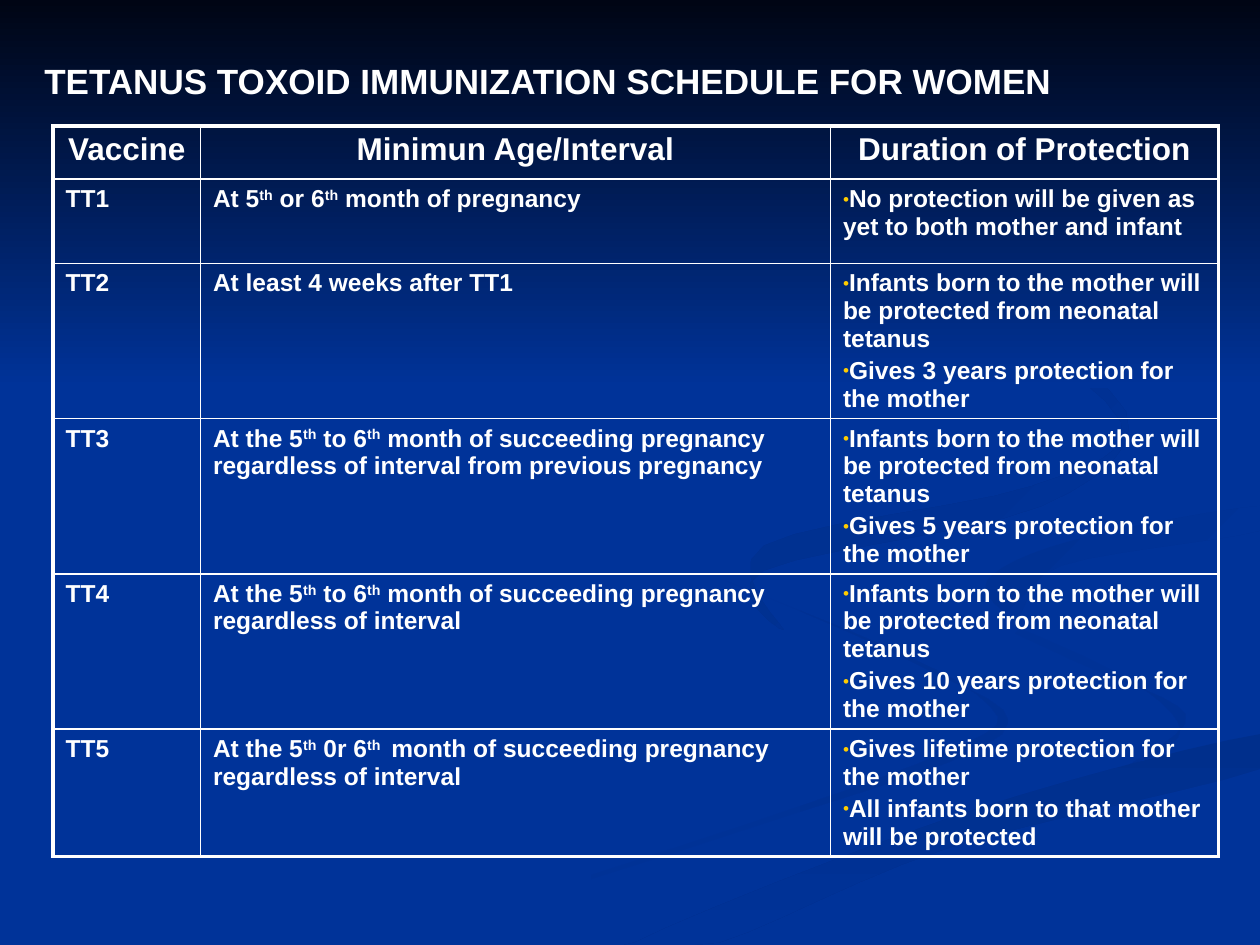
"""Build the tetanus toxoid immunization schedule slide."""
from lxml import etree
from pptx import Presentation
from pptx.dml.color import RGBColor
from pptx.enum.shapes import MSO_SHAPE
from pptx.enum.text import MSO_ANCHOR, PP_ALIGN
from pptx.oxml.ns import qn
from pptx.util import Cm, Pt

LEFT, CENTER = PP_ALIGN.LEFT, PP_ALIGN.CENTER
TOP = MSO_ANCHOR.TOP
RECTANGLE = MSO_SHAPE.RECTANGLE
FONT = "Arial"
COLORS = {
    "blue": "003399", "night": "000514", "white": "FFFFFF", "gold": "FFCC00",
    "shade": "003193", "deep": "002F8C",
}

TITLE = "TETANUS TOXOID IMMUNIZATION SCHEDULE FOR WOMEN"
HEADERS = ["Vaccine ", "Minimun Age/Interval", "Duration of Protection"]
NEONATAL = "Infants born to the mother will be protected from neonatal tetanus"
SCHEDULE = [
    ("TT1", "At 5^th^ or 6^th^ month of pregnancy",
     ["No protection will be given as yet to both mother and infant"]),
    ("TT2", "At least 4 weeks after TT1",
     [NEONATAL, "Gives 3 years protection for the mother"]),
    ("TT3", "At the 5^th^ to 6^th^ month of succeeding pregnancy "
            "regardless of interval from previous pregnancy",
     [NEONATAL, "Gives 5 years protection for the mother"]),
    ("TT4", "At the 5^th^ to 6^th^ month of succeeding pregnancy regardless of interval",
     [NEONATAL, "Gives 10 years protection for the mother"]),
    ("TT5", "At the 5^th^ 0r 6^th ^ month of succeeding pregnancy regardless of interval",
     ["Gives lifetime protection for the mother",
      "All infants born to that mother will be protected"]),
]
COL_WIDTHS = [2.97, 12.7, 7.82]
ROW_HEIGHTS = [1.07, 1.7] + [2.46] * 4

SLIDE_W, SLIDE_H = 25.4, 19.05
BAND_H = 7.82
STEPS = 6
RIBBONS = [
    ("blue", "shade", 0, [(14.6, 11.7), (19.7, 14), (18.5, 15.4), (7.7, 19),
                          (15.1, 16.7), (20.2, 14.8), (18.5, 13.4)]),
    ("blue", "shade", 45, [(18.4, 11.8), (22.4, 13.5), (23.8, 14.7), (22.8, 15.4),
                           (23.9, 14.4), (21.6, 13.3)]),
    ("deep", "blue", 90, [(12.8, 19), (19.4, 16.4), (25.4, 14.8), (25.4, 15.5),
                          (19.1, 17.1), (14.5, 19)]),
    ("shade", "blue", 45, [(19.9, 11.7), (21.6, 10.9), (25.4, 10.2), (25.4, 10.7),
                           (21.4, 11.4), (20.5, 12.4)]),
    ("deep", "blue", 45, [(19.4, 5.9), (22.6, 8.5), (20.8, 9.8), (15.4, 11),
                          (15.8, 12.7), (15.4, 11.5), (21, 10.2), (22.7, 8.3)]),
]


def rgb(name):
    return RGBColor.from_string(COLORS[name])


def spline(a, b, c, d, t):
    return (2 * b + (c - a) * t + (2 * a - 5 * b + 4 * c - d) * t ** 2
            + (3 * b - a - 3 * c + d) * t ** 3) / 2


def smooth_outline(points):
    outline = []
    n = len(points)
    for i in range(n):
        near = [points[(i + k) % n] for k in (-1, 0, 1, 2)]
        for step in range(STEPS):
            x, y = (spline(*axis, step / STEPS) for axis in zip(*near))
            outline.append((Cm(min(x, SLIDE_W)), Cm(min(y, SLIDE_H))))
    return outline


def fill_gradient(sp, first, last, angle):
    sp.shadow.inherit = False
    sp.line.fill.background()
    sp.fill.gradient()
    sp.fill.gradient_angle = (360 - angle) % 360
    for stop, name, position in zip(sp.fill.gradient_stops, (first, last), (0, 1)):
        stop.color.rgb = rgb(name)
        stop.position = position


def add_backdrop(s):
    s.background.fill.solid()
    s.background.fill.fore_color.rgb = rgb("blue")
    for first, last, angle, points in RIBBONS:
        outline = smooth_outline(points)
        builder = s.shapes.build_freeform(*outline[0])
        builder.add_line_segments(outline[1:], close=True)
        fill_gradient(builder.convert_to_shape(), first, last, angle)
    band = s.shapes.add_shape(RECTANGLE, 0, 0, Cm(SLIDE_W), Cm(BAND_H))
    fill_gradient(band, "night", "blue", 90)


def add_runs(p, text, size):
    for i, part in enumerate(text.split("^")):
        r = p.add_run()
        r.text = part
        r.font.name, r.font.size, r.font.bold = FONT, Pt(size), True
        r.font.color.rgb = rgb("white")
        if i % 2:
            r.font._element.set("baseline", "30000")


def add_bullet(p):
    pPr = p._p.get_or_add_pPr()
    pPr.set("marL", "0")
    pPr.set("indent", "0")
    color = etree.SubElement(pPr, qn("a:buClr"))
    etree.SubElement(color, qn("a:srgbClr"), val=COLORS["gold"])
    etree.SubElement(pPr, qn("a:buSzPct"), val="70000")
    etree.SubElement(pPr, qn("a:buFont"), typeface=FONT)
    etree.SubElement(pPr, qn("a:buChar"), char="•")


def set_borders(cell, outer):
    tcPr = cell._tc.get_or_add_tcPr()
    for i, side in enumerate("LRTB"):
        ln = etree.Element(qn("a:ln" + side), w=str(Pt(2.25 if side in outer else 1)))
        fill = etree.SubElement(ln, qn("a:solidFill"))
        etree.SubElement(fill, qn("a:srgbClr"), val=COLORS["white"])
        tcPr.insert(i, ln)


def fill_cell(cell, texts, size, align, bullets, outer):
    cell.fill.background()
    cell.vertical_anchor = TOP
    set_borders(cell, outer)
    tf = cell.text_frame
    for i, text in enumerate(texts):
        p = tf.add_paragraph() if i else tf.paragraphs[0]
        p.alignment = align
        if i:
            p.space_before = Pt(size * 0.2)
        if bullets:
            add_bullet(p)
        add_runs(p, text, size)


def add_schedule(s):
    rows = [[[h] for h in HEADERS]] + [[[v], [age], notes] for v, age, notes in SCHEDULE]
    last_row, last_col = len(rows) - 1, len(HEADERS) - 1
    table = s.shapes.add_table(len(rows), len(HEADERS), Cm(1.07), Cm(2.54),
                               Cm(sum(COL_WIDTHS)), Cm(sum(ROW_HEIGHTS))).table
    table.first_row = table.horz_banding = False
    for col, width in zip(table.columns, COL_WIDTHS):
        col.width = Cm(width)
    for row, height in zip(table.rows, ROW_HEIGHTS):
        row.height = Cm(height)
    for i, row in enumerate(rows):
        size, align = (14, LEFT) if i else (18, CENTER)
        for j, texts in enumerate(row):
            edges = {"L": j == 0, "R": j == last_col, "T": i == 0, "B": i == last_row}
            outer = [side for side, on in edges.items() if on]
            fill_cell(table.cell(i, j), texts, size, align, i > 0 and j == last_col, outer)


def add_title(s):
    sp = s.shapes.title
    sp.element.getparent().append(sp.element)
    sp.left, sp.top, sp.width, sp.height = Cm(0.64), Cm(1.07), Cm(24.13), Cm(1.7)
    tf = sp.text_frame
    tf.word_wrap = True
    tf.vertical_anchor = TOP
    p = tf.paragraphs[0]
    p.alignment = LEFT
    add_runs(p, TITLE, 20)


def main():
    prs = Presentation()
    prs.slide_width, prs.slide_height = Cm(SLIDE_W), Cm(SLIDE_H)
    s = prs.slides.add_slide(prs.slide_layouts[5])
    add_backdrop(s)
    add_title(s)
    add_schedule(s)
    prs.save("out.pptx")


if __name__ == "__main__":
    main()
